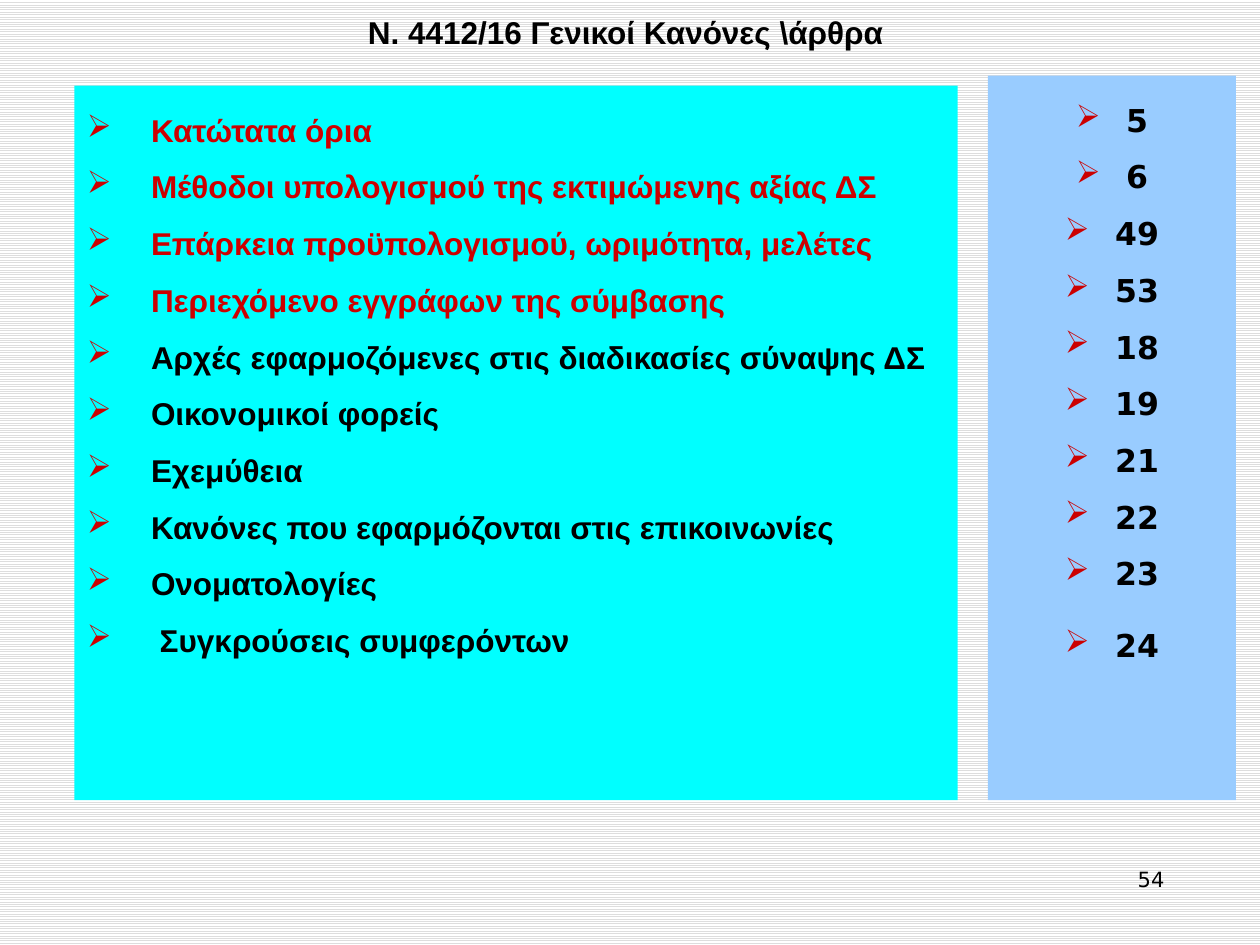
import pptx
import pptx.dml.color
import pptx.enum.dml
import pptx.enum.text
import pptx.oxml
import pptx.oxml.ns
import pptx.util

Inches, Pt = pptx.util.Inches, pptx.util.Pt
Align, Anchor = pptx.enum.text.PP_ALIGN, pptx.enum.text.MSO_ANCHOR

TITLE = "Ν. 4412/16 Γενικοί Κανόνες \\άρθρα"
PAGE_NUMBER = "54"
# rule, article, highlighted
RULES = [
    ("Κατώτατα όρια ", "5", True),
    ("Μέθοδοι υπολογισμού της εκτιμώμενης αξίας ΔΣ", "6", True),
    ("Επάρκεια προϋπολογισμού, ωριμότητα, μελέτες", "49", True),
    ("Περιεχόμενο εγγράφων της σύμβασης", "53", True),
    ("Αρχές εφαρμοζόμενες στις διαδικασίες σύναψης ΔΣ ", "18", False),
    ("Οικονομικοί φορείς ", "19", False),
    ("Εχεμύθεια", "21", False),
    ("Κανόνες που εφαρμόζονται στις επικοινωνίες", "22", False),
    ("Ονοματολογίες ", "23", False),
    (" Συγκρούσεις συμφερόντων ", "24", False),
]
THEME = {
    "text": "000000", "accent": "CC0000",
    "rules": "00FFFF", "articles": "99CCFF",
    "stripe": "DDDDDD", "paper": "FFFFFF",
    "heading_font": "Arial", "number_font": "DejaVu Sans",
    "size": 18, "small": 12, "pitch": 32.4, "last_pitch": 41,
}


def rgb(name):
    return pptx.dml.color.RGBColor.from_string(THEME[name])


def place(shape, box):
    for side, value in zip(("left", "top", "width", "height"), box):
        setattr(shape, side, Inches(value))


def write(para, text, align, font, size="size", bold=True, color="text"):
    para.alignment = align
    span = para.add_run()
    span.text = text
    look = {"name": THEME[font], "size": Pt(THEME[size]), "bold": bold}
    for key, value in look.items():
        setattr(span.font, key, value)
    span.font.color.rgb = rgb(color)


def add_bullet(para, indent):
    props = para._p.get_or_add_pPr()
    props.set("marL", str(Inches(indent)))
    props.set("indent", str(-Inches(indent)))
    namespace = pptx.oxml.ns.nsdecls("a")
    for xml in (
        f'<a:buClr {namespace}><a:srgbClr val="{THEME["accent"]}"/></a:buClr>',
        f'<a:buChar {namespace} char="➢"/>',
    ):
        props.append(pptx.oxml.parse_xml(xml))


def add_text_box(page, box):
    shape = page.shapes.add_textbox(*map(Inches, box))
    shape.text_frame.word_wrap = True
    return shape


def add_list(page, box, fill, entries, align, font, indent, last_pitch):
    """Draw a filled panel of bulleted (text, colour) entries."""
    panel = add_text_box(page, box)
    panel.fill.solid()
    panel.fill.fore_color.rgb = rgb(fill)
    frame = panel.text_frame
    for index, (text, color) in enumerate(entries):
        para = frame.add_paragraph() if index else frame.paragraphs[0]
        is_last = index == len(entries) - 1
        para.line_spacing = Pt(THEME[last_pitch if is_last else "pitch"])
        add_bullet(para, indent)
        write(para, text, align, font, color=color)


def main():
    deck = pptx.Presentation()
    deck.slide_width, deck.slide_height = Inches(10), Inches(7.5)
    page = deck.slides.add_slide(deck.slide_layouts[5])

    paper = page.background.fill
    paper.patterned()
    paper.pattern = pptx.enum.dml.MSO_PATTERN.LIGHT_HORIZONTAL
    paper.fore_color.rgb = rgb("stripe")
    paper.back_color.rgb = rgb("paper")

    number = add_text_box(page, (7.17, 6.83, 2.17, 0.52))
    write(number.text_frame.paragraphs[0], PAGE_NUMBER, Align.RIGHT,
          "number_font", "small", bold=False)

    title = page.shapes.title
    place(title, (0.59, 0.13, 8.75, 0.32))
    title.text_frame.auto_size = pptx.enum.text.MSO_AUTO_SIZE.NONE
    title.text_frame.vertical_anchor = Anchor.BOTTOM
    write(title.text_frame.paragraphs[0], TITLE, Align.CENTER, "heading_font")

    rules = [(rule, "accent" if marked else "text") for rule, _, marked in RULES]
    articles = [(article, "text") for _, article, _ in RULES]
    add_list(page, (0.59, 0.68, 7.01, 5.67), "rules", rules,
             Align.JUSTIFY, "heading_font", 0.51, "pitch")
    add_list(page, (7.84, 0.6, 1.97, 5.75), "articles", articles,
             Align.CENTER, "number_font", 0.4, "last_pitch")
    deck.save("out.pptx")


if __name__ == "__main__":
    main()
